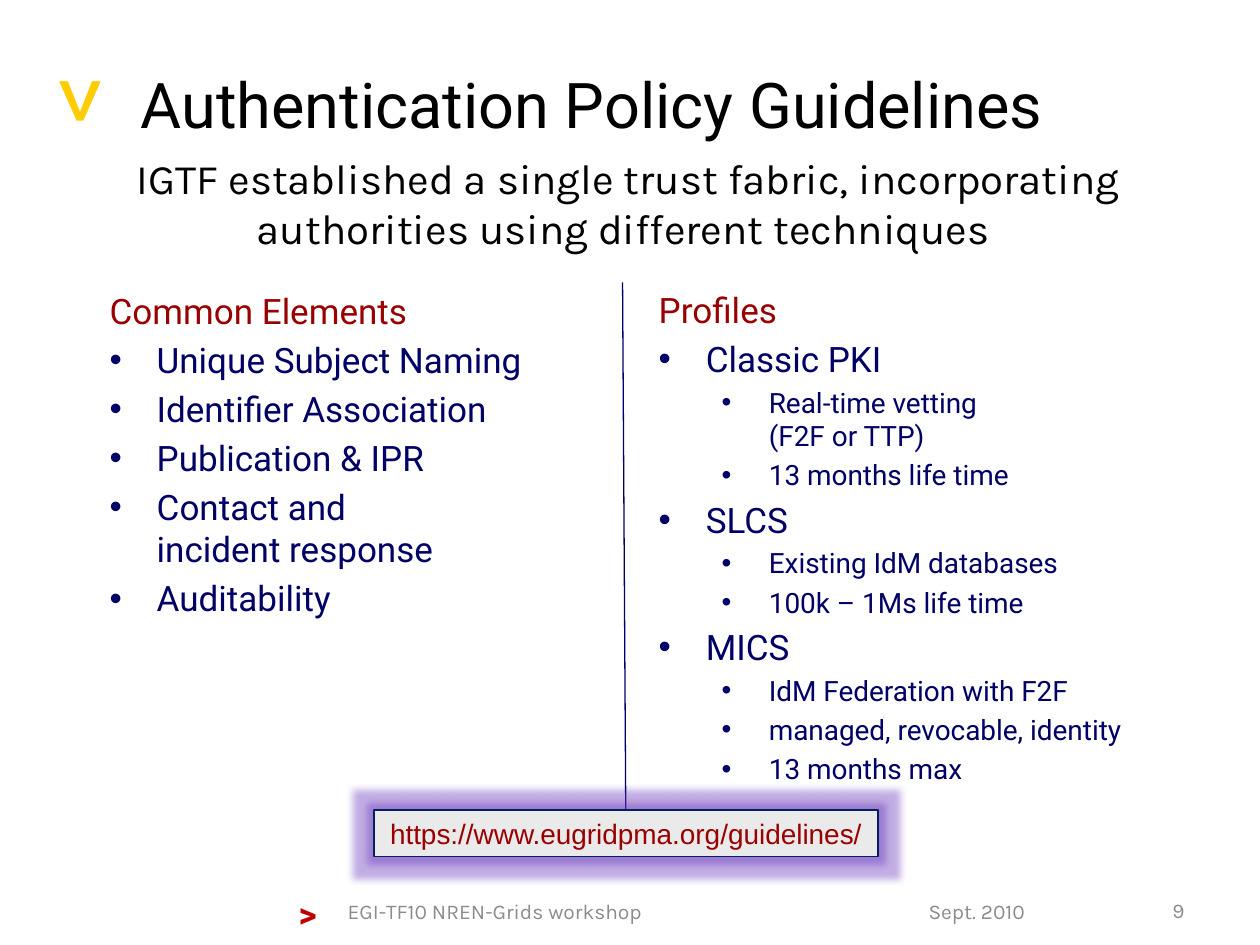
from dataclasses import dataclass

from lxml import etree
from pptx import Presentation
from pptx.dml.color import RGBColor
from pptx.enum import shapes, text
from pptx.oxml.ns import qn
from pptx.util import Cm, Pt


@dataclass(frozen=True)
class Theme:
    heading_font: str = "Roboto"
    body_font: str = "Karla"
    link_font: str = "Arial"
    black: str = "000000"
    navy: str = "000066"
    crimson: str = "990000"
    red: str = "C00000"
    yellow: str = "FFCC00"
    grey: str = "8C8C8C"
    panel: str = "EAEAEA"
    border: str = "002060"
    glow: str = "6633BB"
    mark_size: int = 54
    title_size: int = 36
    lead_size: int = 24
    item_size: int = 20
    detail_size: int = 16
    footer_size: int = 12


THEME = Theme()
LEFT, CENTER, RIGHT = text.PP_ALIGN.LEFT, text.PP_ALIGN.CENTER, text.PP_ALIGN.RIGHT
TOP, MIDDLE = text.MSO_ANCHOR.TOP, text.MSO_ANCHOR.MIDDLE


@dataclass(frozen=True)
class Box:
    left: float
    top: float
    width: float
    height: float

    def lengths(self):
        return Cm(self.left), Cm(self.top), Cm(self.width), Cm(self.height)


@dataclass(frozen=True)
class Label:
    words: str
    box: Box
    size: int
    font: str
    color: str
    align: text.PP_ALIGN = LEFT
    anchor: text.MSO_ANCHOR = TOP
    bold: bool = False
    rotation: int = 0


@dataclass(frozen=True)
class Item:
    words: str
    level: int = 0


@dataclass(frozen=True)
class Column:
    heading: str
    box: Box
    items: tuple[Item, ...]


FOOTER_TOP = 18.06
LABELS = (
    Label(">", Box(5.77, 17.86, 1.19, 1.12), THEME.item_size,
          THEME.heading_font, THEME.red, bold=True),
    Label(">", Box(1.17, 0.58, 1.19, 2.57), THEME.mark_size,
          THEME.heading_font, THEME.yellow, rotation=90),
    Label("Authentication Policy Guidelines", Box(2.59, 0.97, 21.54, 2.21),
          THEME.title_size, THEME.heading_font, THEME.black, anchor=MIDDLE),
    Label("IGTF established a single trust fabric, incorporating "
          "authorities using different techniques ", Box(1.5, 2.95, 22.33, 2.62),
          THEME.lead_size, THEME.body_font, THEME.black, CENTER),
    Label("Sept. 2010", Box(18.47, FOOTER_TOP, 2.97, 0.61),
          THEME.footer_size, THEME.body_font, THEME.grey, anchor=MIDDLE),
    Label("EGI-TF10 NREN-Grids workshop", Box(6.76, FOOTER_TOP, 9.12, 0.61),
          THEME.footer_size, THEME.body_font, THEME.grey, anchor=MIDDLE),
    Label("9", Box(22.81, FOOTER_TOP, 1.32, 0.58),
          THEME.footer_size, THEME.body_font, THEME.grey, RIGHT, MIDDLE),
)
COLUMNS = (
    Column("Common Elements", Box(1.96, 5.72, 10.49, 12.01), (
        Item("Unique Subject Naming"),
        Item("Identifier Association"),
        Item("Publication & IPR"),
        Item("Contact and\nincident response"),
        Item("Auditability"),
    )),
    Column("Profiles", Box(13.03, 5.69, 10.49, 12.01), (
        Item("Classic PKI"),
        Item("Real-time vetting\n(F2F or TTP)", 1),
        Item("13 months life time", 1),
        Item("SLCS"),
        Item("Existing IdM databases", 1),
        Item("100k – 1Ms life time", 1),
        Item("MICS"),
        Item("IdM Federation with F2F", 1),
        Item("managed, revocable, identity", 1),
        Item("13 months max", 1),
    )),
)
LINK = Label("https://www.eugridpma.org/guidelines/", Box(7.54, 16.33, 10.16, 0.94),
             THEME.detail_size, THEME.link_font, THEME.crimson, CENTER)


def add_words(paragraph, words: str, size: int, font: str, color: str,
              bold: bool = False) -> None:
    """Add one run per line, with line breaks between them."""
    for number, line in enumerate(words.split("\n")):
        if number:
            paragraph.add_line_break()
        run = paragraph.add_run()
        run.text = line
        run.font.size = Pt(size)
        run.font.name = font
        run.font.bold = bold
        run.font.color.rgb = RGBColor.from_string(color)


def fill_label(shape, label: Label) -> None:
    frame = shape.text_frame
    frame.word_wrap = True
    frame.vertical_anchor = label.anchor
    paragraph = frame.paragraphs[0]
    paragraph.alignment = label.align
    add_words(paragraph, label.words, label.size, label.font, label.color, label.bold)


def add_label(slide, label: Label) -> None:
    shape = slide.shapes.add_textbox(*label.box.lengths())
    shape.rotation = label.rotation
    fill_label(shape, label)


def add_bullet(paragraph, level: int) -> None:
    paragraph.level = level
    properties = paragraph._p.get_or_add_pPr()
    properties.set("marL", str(Cm(0.95 + 1.27 * level)))
    properties.set("indent", str(Cm(-0.95)))
    etree.SubElement(properties, qn("a:buFont"), typeface="Arial")
    etree.SubElement(properties, qn("a:buChar"), char="•")


def add_column(slide, column: Column) -> None:
    frame = slide.shapes.add_textbox(*column.box.lengths()).text_frame
    frame.word_wrap = True
    add_words(frame.paragraphs[0], column.heading, THEME.item_size,
              THEME.heading_font, THEME.crimson)
    for item in column.items:
        size = THEME.detail_size if item.level else THEME.item_size
        paragraph = frame.add_paragraph()
        add_bullet(paragraph, item.level)
        paragraph.space_before = Pt(size * 0.2)
        add_words(paragraph, item.words, size, THEME.heading_font, THEME.navy)


def add_divider(slide):
    divider = slide.shapes.add_connector(
        shapes.MSO_CONNECTOR.STRAIGHT, Cm(12.55), Cm(5.69), Cm(12.62), Cm(17.27))
    divider.line.color.rgb = RGBColor.from_string(THEME.navy)
    divider.line.width = Pt(0.75)
    etree.SubElement(divider._element.spPr, qn("a:effectLst"))
    return divider


def add_link_panel(slide):
    panel = slide.shapes.add_shape(shapes.MSO_SHAPE.RECTANGLE, *LINK.box.lengths())
    panel.fill.solid()
    panel.fill.fore_color.rgb = RGBColor.from_string(THEME.panel)
    panel.line.color.rgb = RGBColor.from_string(THEME.border)
    panel.line.width = Pt(0.75)
    panel.shadow.inherit = False
    effects = panel._element.spPr.find(qn("a:effectLst"))
    glow = etree.SubElement(effects, qn("a:glow"), rad=str(Pt(8)))
    color = etree.SubElement(glow, qn("a:srgbClr"), val=THEME.glow)
    etree.SubElement(color, qn("a:alpha"), val="40000")
    fill_label(panel, LINK)
    return panel


def main() -> None:
    presentation = Presentation()
    presentation.slide_width, presentation.slide_height = Cm(25.4), Cm(19.05)
    slide = presentation.slides.add_slide(presentation.slide_layouts[6])
    for label in LABELS:
        add_label(slide, label)
    for column in COLUMNS:
        add_column(slide, column)
    divider = add_divider(slide)
    divider.end_connect(add_link_panel(slide), 2)
    presentation.save("out.pptx")


if __name__ == "__main__":
    main()
